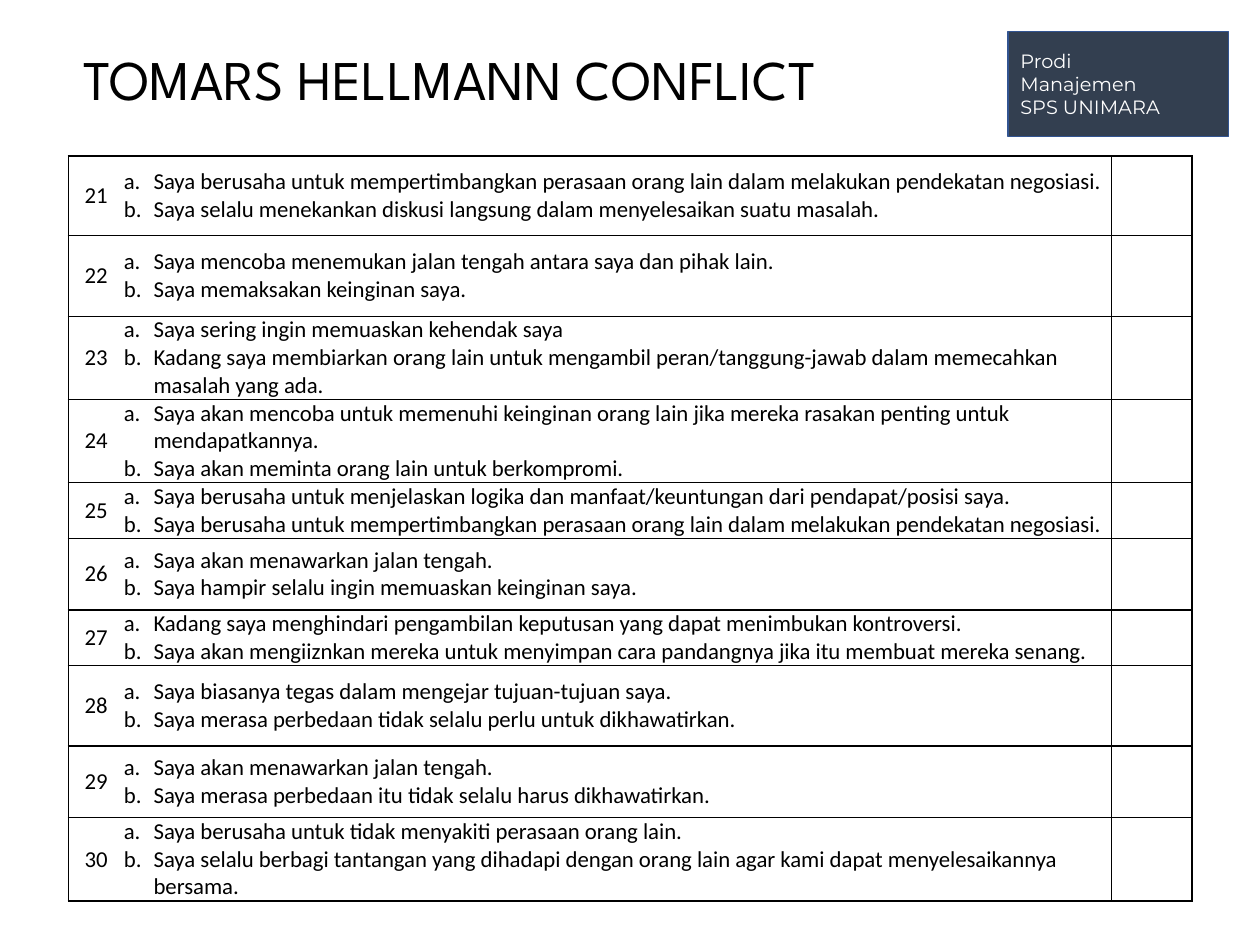
from lxml.etree import SubElement
from pptx import Presentation
from pptx.dml.color import RGBColor
from pptx.enum.shapes import MSO_SHAPE
from pptx.enum.text import MSO_ANCHOR, MSO_AUTO_SIZE, PP_ALIGN
from pptx.oxml.ns import qn
from pptx.util import Pt

BLACK = RGBColor(0x00, 0x00, 0x00)
WHITE = RGBColor(0xFF, 0xFF, 0xFF)
SLATE = RGBColor(0x33, 0x3F, 0x50)
BLUE = RGBColor(0x32, 0x54, 0x91)

TITLE = "TOMARS HELLMANN CONFLICT"
BADGE_LINES = ["Prodi", "Manajemen", "SPS UNIMARA"]
FIRST_NUMBER = 21
# Row height in points, statement a, statement b
QUESTIONS = [
    (45.5, "Saya berusaha untuk mempertimbangkan perasaan orang lain dalam melakukan pendekatan negosiasi.",
     "Saya selalu menekankan diskusi langsung dalam menyelesaikan suatu masalah."),
    (46, "Saya mencoba menemukan jalan tengah antara saya dan pihak lain.",
     "Saya memaksakan keinginan saya."),
    (40.5, "Saya sering ingin memuaskan kehendak saya",
     "Kadang saya membiarkan orang lain untuk mengambil peran/tanggung-jawab dalam memecahkan masalah yang ada."),
    (41, "Saya akan mencoba untuk memenuhi keinginan orang lain jika mereka rasakan penting untuk mendapatkannya.",
     "Saya akan meminta orang lain untuk berkompromi."),
    (31, "Saya berusaha untuk menjelaskan logika dan manfaat/keuntungan dari pendapat/posisi saya.",
     "Saya berusaha untuk mempertimbangkan perasaan orang lain dalam melakukan pendekatan negosiasi."),
    (41, "Saya akan menawarkan jalan tengah.",
     "Saya hampir selalu ingin memuaskan keinginan saya."),
    (31, "Kadang saya menghindari pengambilan keputusan yang dapat menimbukan kontroversi.",
     "Saya akan mengiiznkan mereka untuk menyimpan cara pandangnya jika itu membuat mereka senang."),
    (46, "Saya biasanya tegas dalam mengejar tujuan-tujuan saya.",
     "Saya merasa perbedaan tidak selalu perlu untuk dikhawatirkan."),
    (41, "Saya akan menawarkan jalan tengah.",
     "Saya merasa perbedaan itu tidak selalu harus dikhawatirkan."),
    (41, "Saya berusaha untuk tidak menyakiti perasaan orang lain.",
     "Saya selalu berbagi tantangan yang dihadapi dengan orang lain agar kami dapat menyelesaikannya bersama."),
]
COLUMN_WIDTHS = [31.75, 564.5, 46]
LIST_INDENT = 17
OUTER_LINE, INNER_LINE = 1, 0.75


def write_text(text_frame, lines, size, font, color=BLACK, align=PP_ALIGN.LEFT, spacing=None):
    for index, line in enumerate(lines):
        paragraph = text_frame.add_paragraph() if index else text_frame.paragraphs[0]
        paragraph.alignment = align
        paragraph.line_spacing = spacing
        run = paragraph.add_run()
        run.text = line
        run.font.size = Pt(size)
        run.font.name = font
        run.font.color.rgb = color


def add_lettering(paragraph):
    """Number the paragraph a., b., ... with a hanging indent."""
    properties = paragraph._p.get_or_add_pPr()
    properties.set("marL", str(Pt(LIST_INDENT)))
    properties.set("indent", str(-Pt(LIST_INDENT)))
    SubElement(properties, qn("a:buFont"), typeface="+mj-lt")
    SubElement(properties, qn("a:buAutoNum"), type="alphaLcPeriod")


def set_borders(cell, widths):
    """Draw the left, right, top and bottom borders; a width of 0 hides one."""
    properties = cell._tc.get_or_add_tcPr()
    for index, (side, width) in enumerate(zip("LRTB", widths)):
        line = SubElement(properties, qn(f"a:ln{side}"), w=str(Pt(width)))
        if width:
            fill = SubElement(line, qn("a:solidFill"))
            SubElement(fill, qn("a:srgbClr"), val=str(BLACK))
        else:
            SubElement(line, qn("a:noFill"))
        properties.insert(index, line)


def add_title(slide):
    title = slide.shapes.title
    title.left, title.top, title.width, title.height = Pt(44), Pt(-5), Pt(632), Pt(104.5)
    frame = title.text_frame
    frame.auto_size = MSO_AUTO_SIZE.NONE
    frame.vertical_anchor = MSO_ANCHOR.MIDDLE
    frame.margin_left = frame.margin_right = frame.margin_top = frame.margin_bottom = Pt(3.6)
    write_text(frame, [TITLE], 32, "League Spartan", spacing=0.9)


def add_question_table(slide):
    heights = [height for height, *_ in QUESTIONS]
    table = slide.shapes.add_table(
        len(QUESTIONS), len(COLUMN_WIDTHS), Pt(39), Pt(89.25),
        Pt(sum(COLUMN_WIDTHS)), Pt(sum(heights))).table
    table.first_row = table.horz_banding = False
    for column, width in zip(table.columns, COLUMN_WIDTHS):
        column.width = Pt(width)

    vertical_lines = [OUTER_LINE, 0, INNER_LINE, OUTER_LINE]
    last_row = len(QUESTIONS) - 1
    for row, (height, *statements) in enumerate(QUESTIONS):
        table.rows[row].height = Pt(height)
        top = INNER_LINE if row else OUTER_LINE
        bottom = INNER_LINE if row < last_row else OUTER_LINE
        for column, cell in enumerate(table.rows[row].cells):
            cell.fill.background()
            cell.vertical_anchor = MSO_ANCHOR.MIDDLE
            cell.margin_left = cell.margin_right = cell.margin_top = cell.margin_bottom = 0
            set_borders(cell, (*vertical_lines[column:column + 2], top, bottom))
        number, answer = table.cell(row, 0), table.cell(row, 1)
        write_text(number.text_frame, [str(FIRST_NUMBER + row)], 13, "Calibri", align=PP_ALIGN.CENTER)
        write_text(answer.text_frame, statements, 13, "Calibri")
        for paragraph in answer.text_frame.paragraphs:
            add_lettering(paragraph)


def add_badge(slide):
    badge = slide.shapes.add_shape(MSO_SHAPE.RECTANGLE, Pt(576), Pt(18), Pt(126), Pt(60))
    badge.shadow.inherit = False
    badge.fill.solid()
    badge.fill.fore_color.rgb = SLATE
    badge.line.color.rgb = BLUE
    badge.line.width = Pt(1)
    badge.text_frame.word_wrap = True
    badge.text_frame.vertical_anchor = MSO_ANCHOR.MIDDLE
    write_text(badge.text_frame, BADGE_LINES, 11, "Montserrat", color=WHITE)


def main():
    presentation = Presentation()
    presentation.slide_width, presentation.slide_height = Pt(720), Pt(540)
    slide = presentation.slides.add_slide(presentation.slide_layouts[5])
    add_title(slide)
    add_question_table(slide)
    add_badge(slide)
    presentation.save("out.pptx")


if __name__ == "__main__":
    main()
